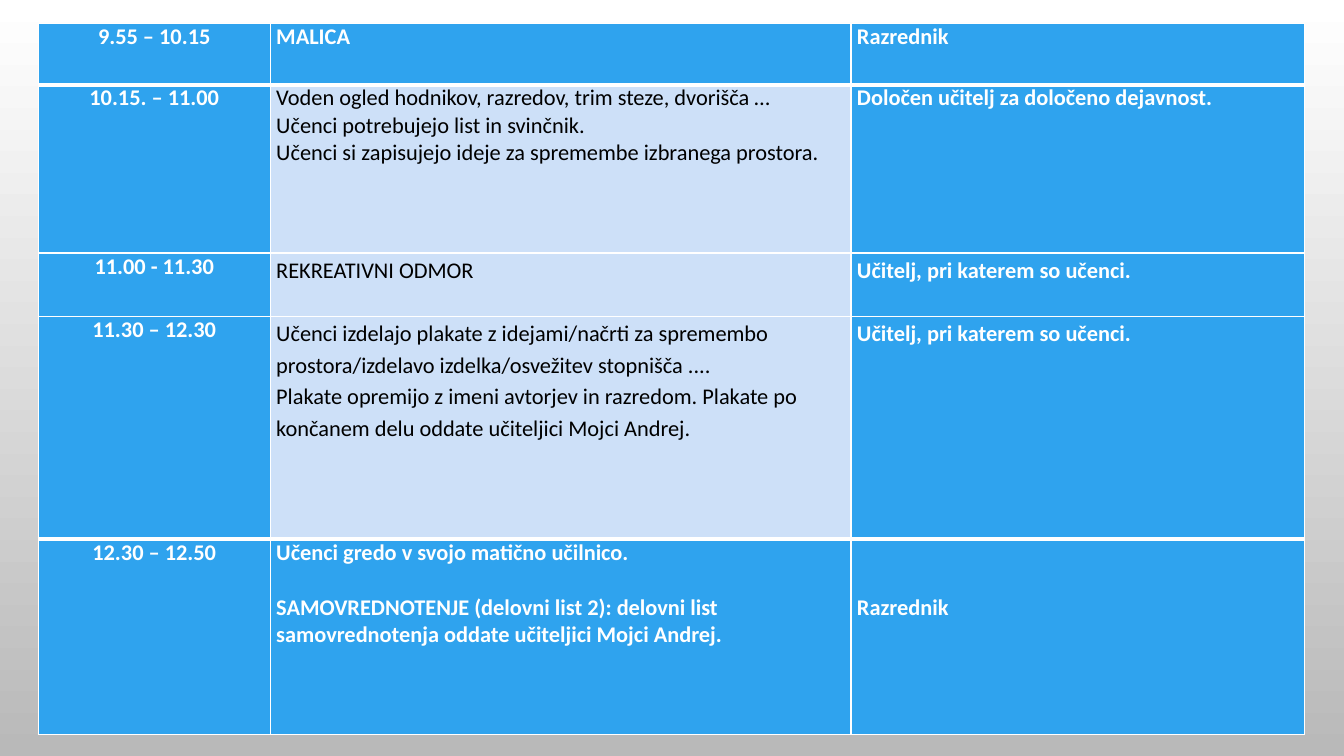
from lxml.etree import SubElement
from pptx import Presentation
from pptx.dml.color import RGBColor
from pptx.enum.text import PP_ALIGN
from pptx.oxml.ns import qn
from pptx.util import Inches, Pt

WHITE = RGBColor(0xFF, 0xFF, 0xFF)
BLACK = RGBColor(0, 0, 0)
GREY = RGBColor(0xB9, 0xB9, 0xB9)
BLUE = RGBColor(0x2F, 0xA3, 0xEE)
PALE = RGBColor(0xCD, 0xE0, 0xF8)
LINE_HEIGHT = Pt(19.5)

COL_WIDTHS = [2.3, 5.76, 4.5]
ROW_HEIGHTS = [0.61, 1.67, 0.63, 2.21, 1.94]
PALE_ROWS = (1, 2, 3)
LOOSE_ROWS = (2, 3)
SCHEDULE = [
    ("9.55 – 10.15", ["MALICA"], "Razrednik"),
    ("10.15. – 11.00",
     ["Voden ogled hodnikov, razredov, trim steze, dvorišča …",
      "Učenci potrebujejo list in svinčnik.",
      "Učenci si zapisujejo ideje za spremembe izbranega prostora."],
     "Določen učitelj za določeno dejavnost."),
    ("11.00 - 11.30", ["REKREATIVNI ODMOR"], "Učitelj, pri katerem so učenci."),
    ("11.30 – 12.30",
     ["Učenci izdelajo plakate z idejami/načrti za spremembo "
      "prostora/izdelavo izdelka/osvežitev stopnišča ....",
      "Plakate opremijo z imeni avtorjev in razredom. Plakate po "
      "končanem delu oddate učiteljici Mojci Andrej."],
     "Učitelj, pri katerem so učenci."),
    ("12.30 – 12.50",
     ["Učenci gredo v svojo matično učilnico.",
      "SAMOVREDNOTENJE (delovni list 2): delovni list "
      "samovrednotenja oddate učiteljici Mojci Andrej."],
     "Razrednik"),
]
LAST = len(SCHEDULE) - 1


def add_border(cell, side, width):
    ln = SubElement(cell._tc.get_or_add_tcPr(), qn(f"a:ln{side}"), w=str(Pt(width)))
    fill = SubElement(ln, qn("a:solidFill"))
    SubElement(fill, qn("a:srgbClr"), val=str(WHITE))


prs = Presentation()
prs.slide_width, prs.slide_height = Inches(13.33), Inches(7.5)
s = prs.slides.add_slide(prs.slide_layouts[6])

# Background gradient, white at the top
bg = s.background.fill
bg.gradient()
bg.gradient_angle = 270
for stop, color in zip(bg.gradient_stops, (WHITE, GREY)):
    stop.color.rgb = color

# Schedule table
table = s.shapes.add_table(len(ROW_HEIGHTS), len(COL_WIDTHS), Inches(0.38), Inches(0.23),
                           Inches(sum(COL_WIDTHS)), Inches(sum(ROW_HEIGHTS))).table
for column, width in zip(table.columns, COL_WIDTHS):
    column.width = Inches(width)
for row, height in zip(table.rows, ROW_HEIGHTS):
    row.height = Inches(height)

for i, (time, activity, teacher) in enumerate(SCHEDULE):
    for j, lines in enumerate(([time], activity, [teacher])):
        cell = table.cell(i, j)
        pale = j == 1 and i in PALE_ROWS

        # Borders: thick below the first row and above the last
        thick_top, thick_bottom = i in (1, LAST), i in (0, LAST - 1)
        for side, width in (("L", 1), ("R", 1), ("T", 3 if thick_top else 1),
                            ("B", 3 if thick_bottom else 1)):
            add_border(cell, side, width)
        cell.fill.solid()
        cell.fill.fore_color.rgb = PALE if pale else BLUE
        cell.margin_left = cell.margin_right = Inches(0.06)
        cell.margin_top = cell.margin_bottom = 0
        if i == LAST and j == 2:
            cell.margin_top = 2 * LINE_HEIGHT  # level with the self-assessment line

        # Text
        tf = cell.text_frame
        for n, line in enumerate(lines):
            p = tf.paragraphs[0] if n == 0 else tf.add_paragraph()
            p.alignment = PP_ALIGN.CENTER if j == 0 else PP_ALIGN.LEFT
            if j > 0 and i in LOOSE_ROWS:
                p.line_spacing = 1.15
            if i == LAST and n > 0:
                p.space_before = LINE_HEIGHT
            r = p.add_run()
            r.text = line
            r.font.name = "Calibri"
            r.font.size = Pt(16)
            r.font.bold = not pale
            r.font.color.rgb = BLACK if pale else WHITE

prs.save("out.pptx")
